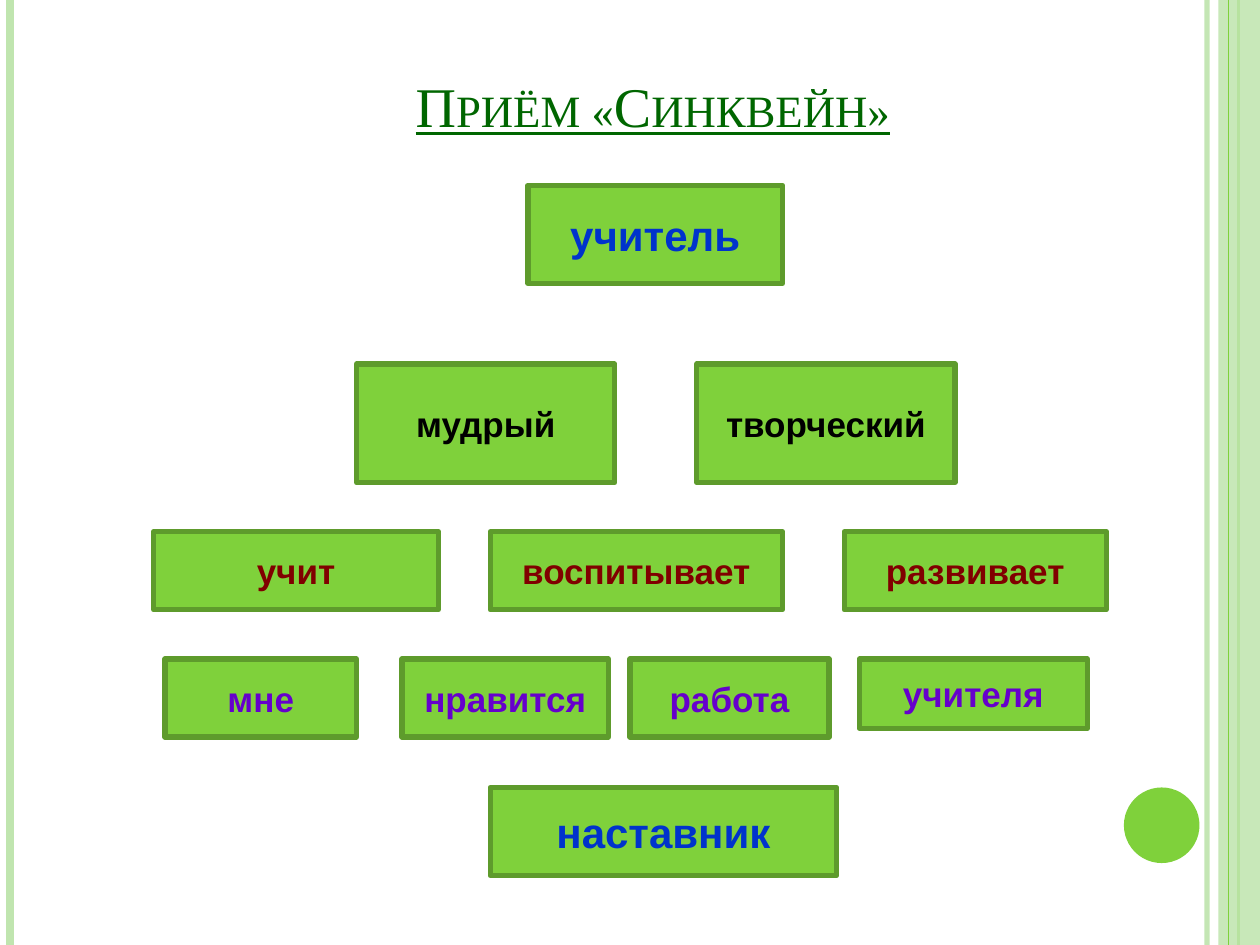
from dataclasses import dataclass

from lxml import etree
from pptx import Presentation
from pptx.dml.color import RGBColor
from pptx.enum.shapes import MSO_CONNECTOR, MSO_SHAPE
from pptx.enum.text import MSO_ANCHOR, PP_ALIGN
from pptx.oxml.ns import qn
from pptx.util import Inches, Pt

STRAIGHT = MSO_CONNECTOR.STRAIGHT
RECTANGLE, OVAL = MSO_SHAPE.RECTANGLE, MSO_SHAPE.OVAL
MIDDLE, BOTTOM = MSO_ANCHOR.MIDDLE, MSO_ANCHOR.BOTTOM
CENTER = PP_ALIGN.CENTER


@dataclass(frozen=True)
class Theme:
    green: str = "7FD13B"
    pale_green: str = "C0E5AF"
    border: str = "5E9B2C"
    title: str = "006600"
    noun: str = "0033CC"
    adjective: str = "000000"
    verb: str = "800000"
    phrase: str = "6600CC"
    title_font: str = "Times New Roman"
    word_font: str = "Arial"
    title_size: int = 32
    noun_size: int = 24
    word_size: int = 20
    border_width: float = 3


@dataclass(frozen=True)
class Stripe:
    x: float
    color: str
    width: float
    opacity: int = 100


@dataclass(frozen=True)
class Word:
    text: str
    left: float
    width: float
    height: float


@dataclass(frozen=True)
class Verse:
    top: float
    color: str
    size: int
    words: tuple[Word, ...]


THEME = Theme()
SLIDE_WIDTH, SLIDE_HEIGHT = 10, 7.5

STRIPES_BEHIND_BAND = (
    Stripe(9.58, THEME.pale_green, 3, 93),
    Stripe(0.08, THEME.pale_green, 4.5),
    Stripe(9.83, THEME.green, 1.5),
)
STRIPE_ON_BAND = Stripe(9.75, THEME.green, 0.75)

CINQUAIN = (
    Verse(1.47, THEME.noun, THEME.noun_size, (Word("учитель", 4.19, 2.02, 0.78),)),
    Verse(2.89, THEME.adjective, THEME.word_size, (
        Word("мудрый", 2.83, 2.05, 0.94),
        Word("творческий", 5.53, 2.05, 0.94),
    )),
    Verse(4.22, THEME.verb, THEME.word_size, (
        Word("учит", 1.22, 2.26, 0.62),
        Word("воспитывает", 3.89, 2.32, 0.62),
        Word("развивает", 6.7, 2.08, 0.62),
    )),
    Verse(5.23, THEME.phrase, THEME.word_size, (
        Word("мне", 1.31, 1.52, 0.62),
        Word("нравится", 3.19, 1.64, 0.62),
        Word("работа", 5, 1.58, 0.62),
        Word("учителя", 6.82, 1.81, 0.55),
    )),
    Verse(6.25, THEME.noun, THEME.noun_size, (Word("наставник", 3.89, 2.75, 0.7),)),
)


def set_opacity(element, percent: int) -> None:
    if percent < 100:
        color = element.spPr.find(".//" + qn("a:srgbClr"))
        etree.SubElement(color, qn("a:alpha"), val=str(percent * 1000))


def draw_stripe(slide, stripe: Stripe) -> None:
    x = Inches(stripe.x)
    line = slide.shapes.add_connector(STRAIGHT, x, 0, x, Inches(SLIDE_HEIGHT))
    line.line.color.rgb = RGBColor.from_string(stripe.color)
    line.line.width = Pt(stripe.width)
    set_opacity(line._element, stripe.opacity)
    etree.SubElement(line._element.spPr, qn("a:effectLst"))


def draw_shape(slide, kind, box: tuple[float, ...], color: str, opacity: int = 100):
    shape = slide.shapes.add_shape(kind, *map(Inches, box))
    shape.shadow.inherit = False
    shape.fill.solid()
    shape.fill.fore_color.rgb = RGBColor.from_string(color)
    shape.line.fill.background()
    set_opacity(shape._element, opacity)
    return shape


def write_text(shape, text: str, anchor, color: str, font_format: dict):
    frame = shape.text_frame
    frame.word_wrap = True
    frame.vertical_anchor = anchor
    paragraph = frame.paragraphs[0]
    paragraph.alignment = CENTER
    run = paragraph.add_run()
    run.text = text
    run.font.color.rgb = RGBColor.from_string(color)
    for attribute, value in font_format.items():
        setattr(run.font, attribute, value)
    return run


def draw_title(slide, text: str) -> None:
    title = slide.shapes.add_textbox(*map(Inches, (1.62, 0.23, 7.12, 0.92)))
    font_format = {"name": THEME.title_font, "size": Pt(THEME.title_size), "underline": True}
    run = write_text(title, text, BOTTOM, THEME.title, font_format)
    run._r.get_or_add_rPr().set("cap", "small")


def draw_verse(slide, verse: Verse) -> None:
    font_format = {"name": THEME.word_font, "size": Pt(verse.size), "bold": True}
    for word in verse.words:
        box = (word.left, verse.top, word.width, word.height)
        card = draw_shape(slide, RECTANGLE, box, THEME.green)
        card.line.color.rgb = RGBColor.from_string(THEME.border)
        card.line.width = Pt(THEME.border_width)
        write_text(card, word.text, MIDDLE, verse.color, font_format)


def main() -> None:
    presentation = Presentation()
    presentation.slide_width = Inches(SLIDE_WIDTH)
    presentation.slide_height = Inches(SLIDE_HEIGHT)
    slide = presentation.slides.add_slide(presentation.slide_layouts[6])

    for stripe in STRIPES_BEHIND_BAND:
        draw_stripe(slide, stripe)
    draw_shape(slide, RECTANGLE, (9.67, 0, 0.33, SLIDE_HEIGHT), THEME.pale_green, 87)
    draw_stripe(slide, STRIPE_ON_BAND)
    draw_shape(slide, OVAL, (8.92, 6.25, 0.6, 0.6), THEME.green)

    draw_title(slide, "Приём «Синквейн»")
    for verse in CINQUAIN:
        draw_verse(slide, verse)

    presentation.save("out.pptx")


if __name__ == "__main__":
    main()
